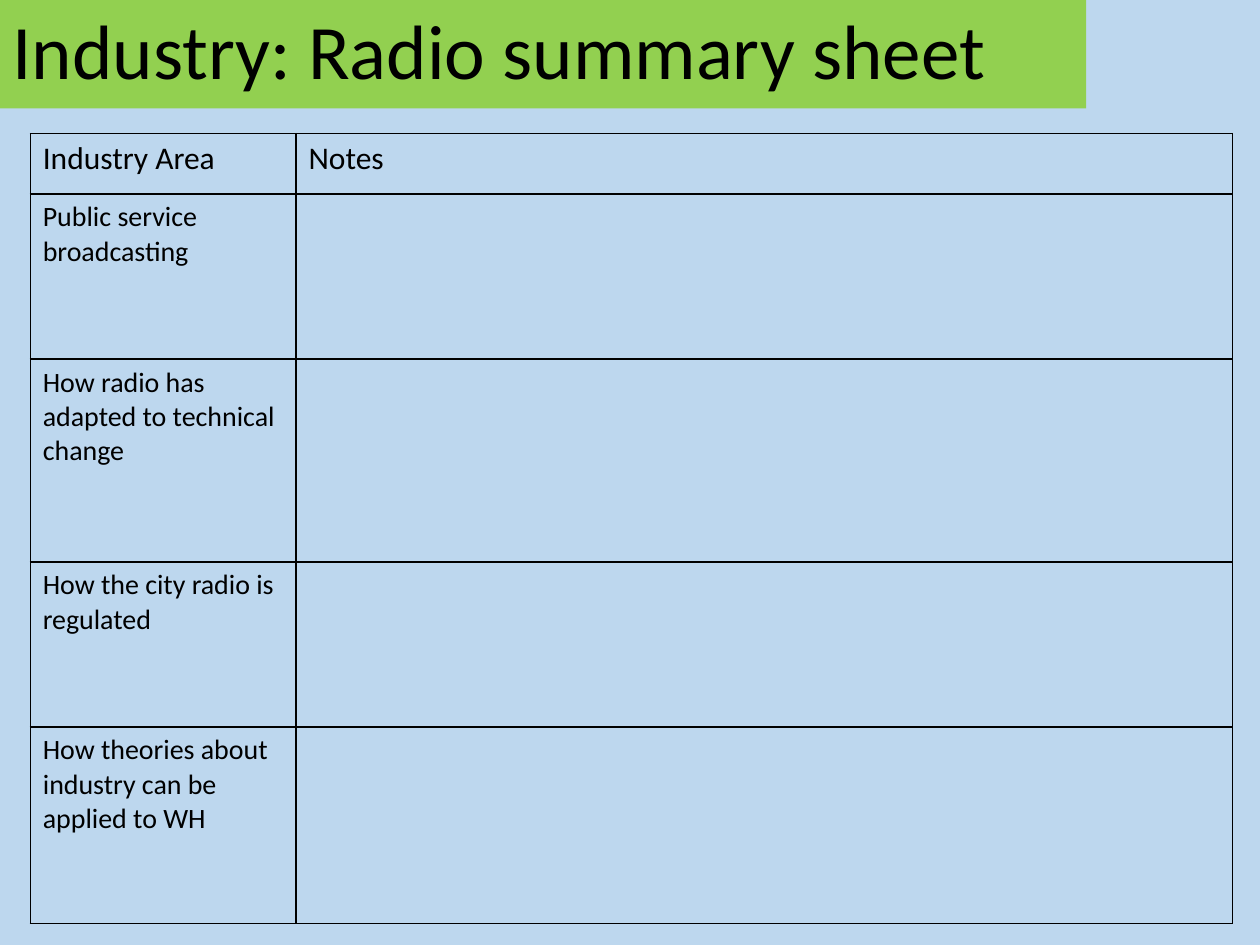
"""Build a radio industry summary sheet with a title band and a notes table."""
import dataclasses

import pptx
import pptx.dml.color
import pptx.enum.text
import pptx.oxml.ns
import pptx.util
from lxml import etree

Inches = pptx.util.Inches
FONT = "Calibri"
BLACK = "000000"
BAND_GREEN = "92D050"
PAGE_BLUE = "BDD7EE"
COLUMN_WIDTHS = (2.11, 7.43)


@dataclasses.dataclass(frozen=True)
class SheetRow:
    area: str
    height: float
    notes: str = ""
    size: int = 16


SHEET_ROWS = (
    SheetRow("Industry Area", 0.48, "Notes", 18),
    SheetRow("Public service broadcasting", 1.31),
    SheetRow("How radio has adapted to technical change", 1.61),
    SheetRow("How the city radio is regulated", 1.31),
    SheetRow("How theories about industry can be applied to WH", 1.56),
)


def paint(fill, colour: str) -> None:
    fill.solid()
    fill.fore_color.rgb = pptx.dml.color.RGBColor.from_string(colour)


def write(text_frame, text: str, size: int) -> None:
    text_frame.text = text
    paragraph = text_frame.paragraphs[0]
    paragraph.alignment = pptx.enum.text.PP_ALIGN.LEFT
    paragraph.font.size = pptx.util.Pt(size)
    for run in paragraph.runs:
        run.font.name = FONT
        run.font.size = pptx.util.Pt(size)
        run.font.bold = False
        paint(run.font.fill, BLACK)


def add_borders(cell, width: float = 1) -> None:
    properties = cell._tc.get_or_add_tcPr()
    for edge in ("a:lnL", "a:lnR", "a:lnT", "a:lnB"):
        line = etree.SubElement(properties, pptx.oxml.ns.qn(edge), w=str(pptx.util.Pt(width)))
        solid = etree.SubElement(line, pptx.oxml.ns.qn("a:solidFill"))
        etree.SubElement(solid, pptx.oxml.ns.qn("a:srgbClr"), val=BLACK)


def format_title(title, text: str) -> None:
    title.left, title.top = Inches(0), Inches(0)
    title.width, title.height = Inches(8.62), Inches(0.86)
    paint(title.fill, BAND_GREEN)
    write(title.text_frame, text, 44)
    title.text_frame.auto_size = pptx.enum.text.MSO_AUTO_SIZE.NONE
    title.text_frame.vertical_anchor = pptx.enum.text.MSO_ANCHOR.MIDDLE
    title.text_frame.paragraphs[0].line_spacing = 0.9


def add_summary_table(slide, sheet_rows: tuple[SheetRow, ...]) -> None:
    total_height = sum(row.height for row in sheet_rows)
    summary = slide.shapes.add_table(
        len(sheet_rows), len(COLUMN_WIDTHS), Inches(0.24), Inches(1.06),
        Inches(sum(COLUMN_WIDTHS)), Inches(total_height),
    ).table
    summary.first_row = False
    summary.horz_banding = False
    for column, width in zip(summary.columns, COLUMN_WIDTHS):
        column.width = Inches(width)
    for table_row, sheet_row in zip(summary.rows, sheet_rows):
        table_row.height = Inches(sheet_row.height)
        for cell, text in zip(table_row.cells, (sheet_row.area, sheet_row.notes)):
            write(cell.text_frame, text, sheet_row.size)
            add_borders(cell)
            cell.fill.background()


def main() -> None:
    presentation = pptx.Presentation()
    presentation.slide_width = Inches(10)
    presentation.slide_height = Inches(7.5)
    slide = presentation.slides.add_slide(presentation.slide_layouts.get_by_name("Title Only"))
    paint(slide.background.fill, PAGE_BLUE)
    format_title(slide.shapes.title, "Industry: Radio summary sheet")
    add_summary_table(slide, SHEET_ROWS)
    presentation.save("out.pptx")


if __name__ == "__main__":
    main()
